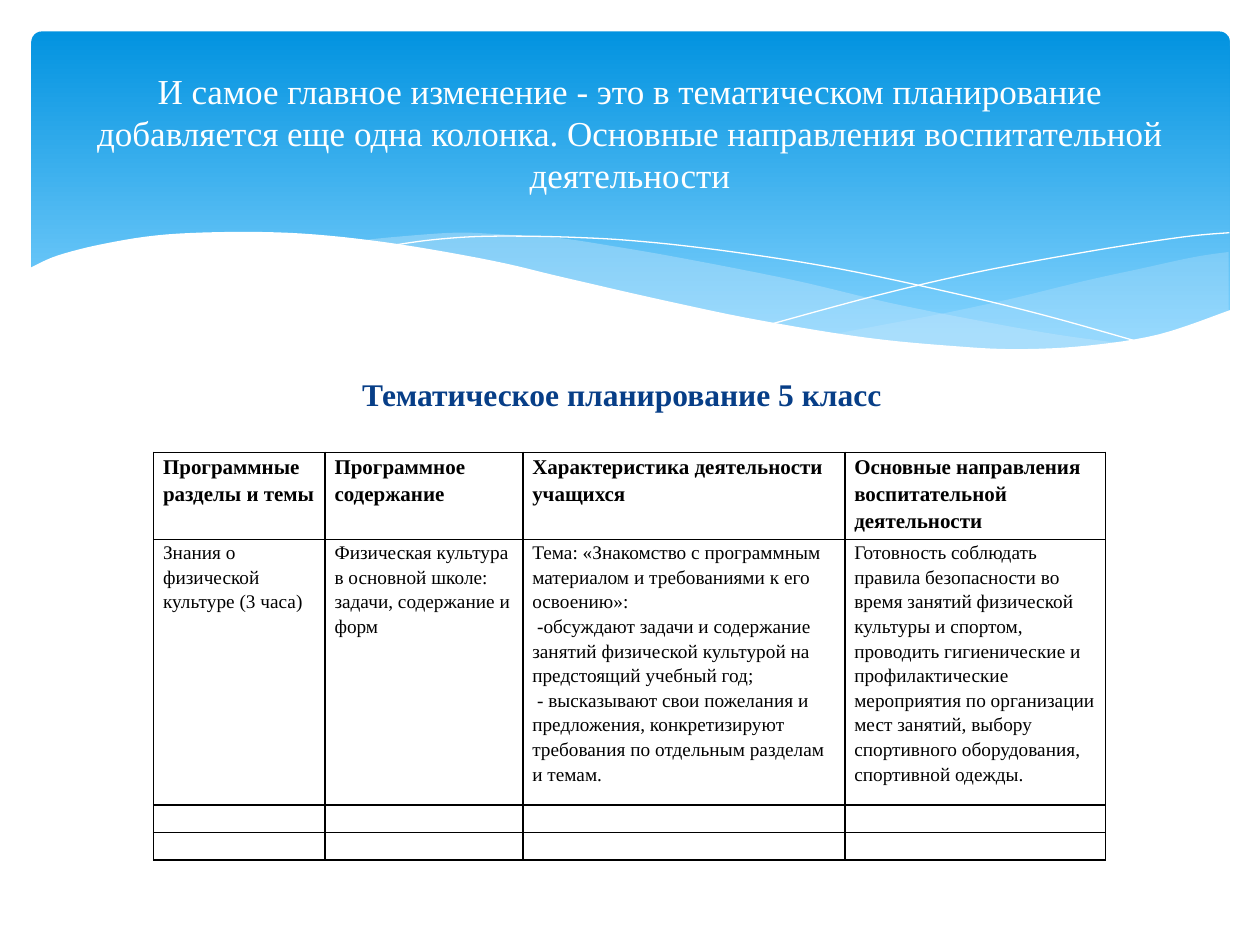
from lxml import etree
from pptx import Presentation
from pptx.dml.color import RGBColor
from pptx.enum.shapes import MSO_SHAPE
from pptx.enum.text import MSO_ANCHOR, MSO_AUTO_SIZE, PP_ALIGN
from pptx.oxml.ns import qn
from pptx.util import Pt

ROUNDED = MSO_SHAPE.ROUNDED_RECTANGLE
MIDDLE, TOP = MSO_ANCHOR.MIDDLE, MSO_ANCHOR.TOP
CENTER, LEFT = PP_ALIGN.CENTER, PP_ALIGN.LEFT
NO_AUTOFIT = MSO_AUTO_SIZE.NONE
FONT = "Times New Roman"
COLORS = {
    "white": "FFFFFF",
    "black": "000000",
    "navy": "073E87",
    "sky_top": "0293E0",
    "sky_bottom": "83D3FE",
    "mist": "C6E7FC",
}

RIGHT_WAVE = [
    [(460, 126), (440, 129), (410, 135.5), (378, 142.5), (337, 152.5), (300, 160.5), (266, 167), (234, 173)],
    [(234, 173), (294, 180), (344, 182), (386, 179.5), (426, 173), (460, 160)],
]
LEFT_WAVE = [
    [(-36, 119.5), (-17, 117.5), (18, 115), (45, 116), (77, 118), (110, 123), (147.5, 129.5),
     (211, 142), (266, 155), (316, 165), (360.5, 173), (401, 178.5)],
    [(401, 178.5), (368, 181.5), (331, 182), (297, 181.5), (259, 178), (214.5, 170),
     (165.5, 160.5), (111.5, 149), (81, 142), (49, 134), (18.5, 128), (-36, 119.5)],
]
LONG_LINE = [[(-19.5, 122.5), (5.5, 119), (36.5, 117), (82, 117.5), (125, 120), (177, 126),
              (237, 135.5), (305, 150), (356, 162.5), (411, 178)]]
SHORT_LINE = [[(199.5, 167), (258.5, 151), (316.5, 137.5), (381.5, 125.5), (433.5, 117.5), (460.5, 115)]]
FRONT_WAVE = [
    [(-225.5, 135.5), (-209, 128), (-181, 121), (-147, 116), (-103, 114.5), (-62, 116), (-14.5, 121.5),
     (39.5, 131), (80, 140.5), (139, 154), (192, 165), (253.5, 175), (306, 180), (340.5, 181.5),
     (379.5, 179.5), (420.5, 173), (461.5, 159)],
    [(461.5, 219), (-225.5, 219)],
]
WAVE_ORIGIN_X = 224

HEADINGS = [
    "Программные разделы и темы",
    "Программное содержание",
    "Характеристика деятельности учащихся",
    "Основные направления воспитательной деятельности",
]
LESSON = [
    "Знания о физической культуре (3 часа)",
    "Физическая культура в основной школе: задачи, содержание и форм",
    "Тема: «Знакомство с программным материалом и требованиями к его освоению»:\n"
    " -обсуждают задачи и содержание занятий физической культурой на предстоящий учебный год;\n"
    " - высказывают свои пожелания и предложения, конкретизируют требования по отдельным разделам и темам.",
    "Готовность соблюдать правила безопасности во время занятий физической культуры и спортом, "
    "проводить гигиенические и профилактические мероприятия по организации мест занятий, "
    "выбору спортивного оборудования, спортивной одежды.",
]
ROWS = [HEADINGS, LESSON, [""] * 4, [""] * 4]


def rgb(name):
    """Return the named palette colour."""
    return RGBColor.from_string(COLORS[name])


def write(frame, text, size=12, color="black", bold=False, align=LEFT, spacing=None, anchor=TOP):
    """Fill a text frame with one paragraph for each line of text."""
    frame.word_wrap = True
    frame.vertical_anchor = anchor
    for index, line in enumerate(text.split("\n")):
        paragraph = frame.add_paragraph() if index else frame.paragraphs[0]
        paragraph.alignment = align
        paragraph.line_spacing = spacing
        if not line:
            etree.SubElement(paragraph._p, qn("a:endParaRPr"), sz=str(size * 100))
            continue
        run = paragraph.add_run()
        run.text = line
        run.font.name, run.font.size, run.font.bold = FONT, Pt(size), bold
        run.font.color.rgb = rgb(color)


def smooth(knots, steps=6):
    """Return points of a Catmull-Rom curve through the knots."""
    if len(knots) < 3:
        return knots
    padded = [knots[0], *knots, knots[-1]]
    points = [knots[0]]
    for a, b, c, d in zip(padded, padded[1:], padded[2:], padded[3:]):
        for step in range(1, steps + 1):
            t = step / steps
            points.append(tuple(
                0.5 * (2 * q + (r - p) * t + (2 * p - 5 * q + 4 * r - s) * t ** 2
                       + (3 * q - p - 3 * r + s) * t ** 3)
                for p, q, r, s in zip(a, b, c, d)))
    return points


def add_wave(slide, box, edges, fill=None, opacity=100):
    """Draw a filled wave, or a white hairline when no fill is given."""
    left, top = box[:2]
    points = [(Pt(left + WAVE_ORIGIN_X + x), Pt(top + y)) for edge in edges for x, y in smooth(edge)]
    builder = slide.shapes.build_freeform(*points[0])
    builder.add_line_segments(points[1:], close=fill is not None)
    wave = builder.convert_to_shape()
    wave.shadow.inherit = False
    if fill is None:
        wave.fill.background()
        wave.line.color.rgb = rgb("white")
        wave.line.width = Pt(0)
        return
    wave.fill.solid()
    wave.fill.fore_color.rgb = rgb(fill)
    wave.line.fill.background()
    if opacity < 100:
        color = wave.fill._xPr.find(".//" + qn("a:srgbClr"))
        etree.SubElement(color, qn("a:alpha"), val=str(opacity * 1000))


def add_banner(slide, box):
    """Draw the blue gradient panel with its waves."""
    panel = slide.shapes.add_shape(ROUNDED, *map(Pt, box))
    panel.adjustments[0] = 0.03
    panel.shadow.inherit = False
    panel.line.fill.background()
    panel.fill.gradient()
    panel.fill.gradient_angle = 270
    for stop, color, position in zip(panel.fill.gradient_stops, ("sky_top", "sky_bottom"), (0, 0.9)):
        stop.color.rgb = rgb(color)
        stop.position = position
    add_wave(slide, box, RIGHT_WAVE, "mist", 29)
    add_wave(slide, box, LEFT_WAVE, "mist", 40)
    add_wave(slide, box, LONG_LINE)
    add_wave(slide, box, SHORT_LINE)
    add_wave(slide, box, FRONT_WAVE, "white")


def place_title(slide, box, text):
    """Format the title placeholder and bring it in front of the banner."""
    title = slide.shapes.title
    title.left, title.top, title.width, title.height = map(Pt, box)
    title.text_frame.auto_size = NO_AUTOFIT
    write(title.text_frame, text, size=20, color="white", align=CENTER, anchor=MIDDLE)
    title.element.getparent().append(title.element)


def add_subtitle(slide, box, text):
    """Add the heading above the plan table."""
    frame = slide.shapes.add_textbox(*map(Pt, box)).text_frame
    frame.margin_left = Pt(70)
    write(frame, text, size=18, color="navy", bold=True)


def add_borders(cell):
    """Outline a cell with black lines one point wide."""
    properties = cell._tc.get_or_add_tcPr()
    for side in ("lnL", "lnR", "lnT", "lnB"):
        line = etree.SubElement(properties, qn(f"a:{side}"), w=str(Pt(1)))
        fill = etree.SubElement(line, qn("a:solidFill"))
        etree.SubElement(fill, qn("a:srgbClr"), val=COLORS["black"])


def add_plan_table(slide, box, widths, heights):
    """Add the lesson plan table."""
    table = slide.shapes.add_table(len(ROWS), len(widths), *map(Pt, box)).table
    table.horz_banding = False
    for column, width in zip(table.columns, widths):
        column.width = Pt(width)
    for r, (texts, height) in enumerate(zip(ROWS, heights)):
        table.rows[r].height = Pt(height)
        for c, text in enumerate(texts):
            cell = table.cell(r, c)
            cell.margin_left = cell.margin_right = Pt(5.4)
            cell.margin_top = cell.margin_bottom = Pt(0)
            add_borders(cell)
            cell.fill.background()
            write(cell.text_frame, text, size=11 if r else 12, bold=r == 0, spacing=1.15)


def main():
    """Build and save the slide."""
    deck = Presentation()
    deck.slide_width, deck.slide_height = Pt(720), Pt(540)
    slide = deck.slides.add_slide(deck.slide_layouts[5])
    add_banner(slide, (18, 18, 684.7, 194.4))
    place_title(slide, (36, 26.6, 648, 98.6),
                "И самое главное изменение - это в тематическом планирование добавляется еще одна колонка. "
                "Основные направления воспитательной деятельности")
    add_subtitle(slide, (137, 211, 583, 271), "Тематическое планирование 5 класс")
    add_plan_table(slide, (87.8, 258.5, 544, 218), (98, 113, 184, 149), (46, 140.5, 15.75, 15.75))
    deck.save("out.pptx")


if __name__ == "__main__":
    main()
